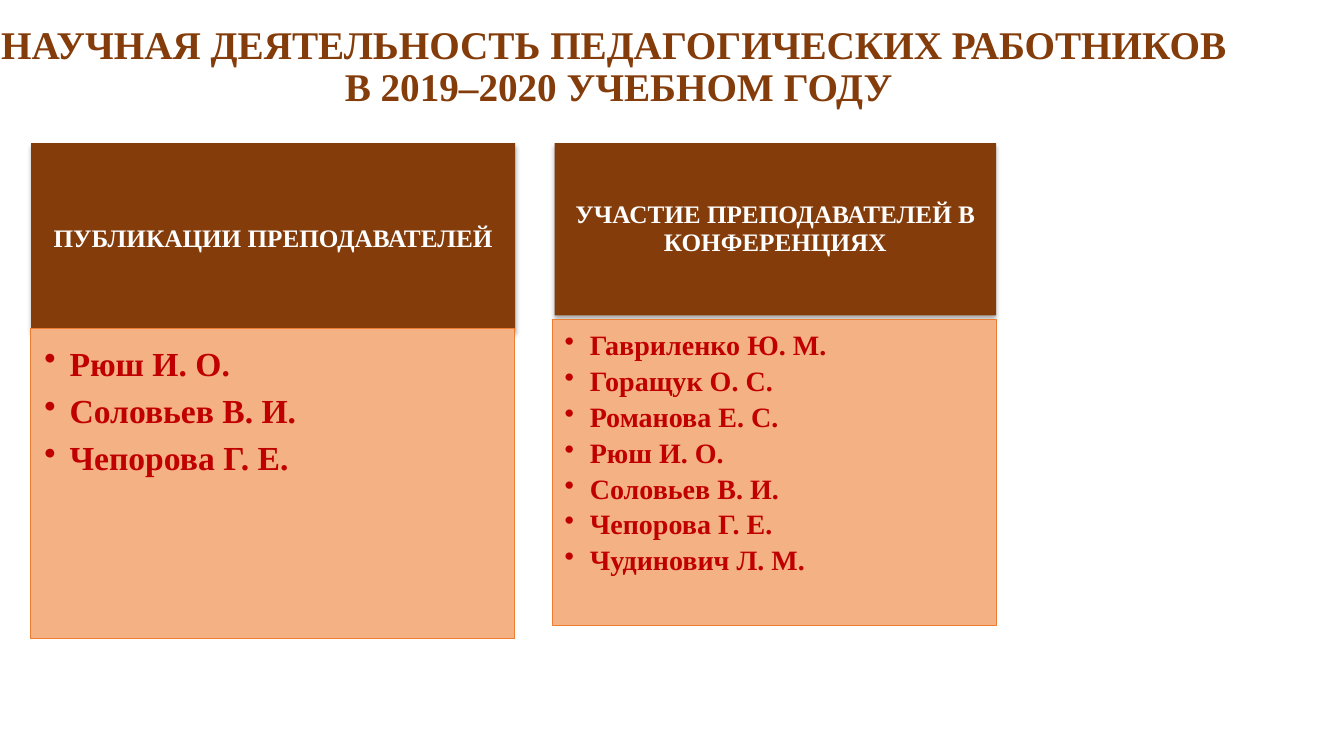
"""Build the slide on the research work of the teaching staff in 2019–2020."""
from lxml import etree
from pptx import Presentation
from pptx.dml.color import RGBColor
from pptx.enum.shapes import MSO_SHAPE
from pptx.enum.text import MSO_ANCHOR, MSO_AUTO_SIZE, PP_ALIGN
from pptx.oxml.ns import qn
from pptx.util import Pt

PX = 9144
RECTANGLE = MSO_SHAPE.RECTANGLE
TOP, MIDDLE = MSO_ANCHOR.TOP, MSO_ANCHOR.MIDDLE
LEFT, CENTER = PP_ALIGN.LEFT, PP_ALIGN.CENTER
NO_AUTOFIT = MSO_AUTO_SIZE.NONE
BROWN = RGBColor(0x84, 0x3C, 0x0B)
PEACH = RGBColor(0xF4, 0xB1, 0x83)
ORANGE = RGBColor(0xED, 0x7D, 0x31)
RED = RGBColor(0xC0, 0x00, 0x00)
WHITE = RGBColor(0xFF, 0xFF, 0xFF)


def write(shape, lines, size, color, insets=(10, 5, 10, 5), anchor=MIDDLE,
          align=CENTER, spacing=0.9, after=0, bulleted=False):
    frame = shape.text_frame
    frame.word_wrap = True
    frame.auto_size = NO_AUTOFIT
    frame.vertical_anchor = anchor
    (frame.margin_left, frame.margin_top,
     frame.margin_right, frame.margin_bottom) = [inset * PX for inset in insets]
    for index, line in enumerate(lines):
        paragraph = frame.add_paragraph() if index else frame.paragraphs[0]
        paragraph.text = line
        paragraph.alignment = align
        paragraph.line_spacing = spacing
        paragraph.space_before = Pt(0)
        paragraph.space_after = Pt(after)
        if bulleted:
            paragraph.level = 1
            properties = paragraph._p.get_or_add_pPr()
            properties.set("marL", str(25 * PX))
            properties.set("indent", str(-25 * PX))
            etree.SubElement(properties, qn("a:buChar"), char="•")
        for run in paragraph.runs:
            run.font.name = "Times New Roman"
            run.font.size = Pt(size)
            run.font.bold = True
            run.font.color.rgb = color


def add_panel(slide, box, fill):
    panel = slide.shapes.add_shape(RECTANGLE, *[side * PX for side in box])
    panel.shadow.inherit = False
    panel.fill.solid()
    panel.fill.fore_color.rgb = fill
    panel.line.fill.background()
    return panel


presentation = Presentation()
presentation.slide_width = 1333 * PX
presentation.slide_height = 750 * PX
slide = presentation.slides.add_slide(presentation.slide_layouts[5])

title = slide.shapes.title
title.left, title.top, title.width, title.height = [
    side * PX for side in (-49, 5, 1325, 125)]
write(title, ["НАУЧНАЯ ДЕЯТЕЛЬНОСТЬ ПЕДАГОГИЧЕСКИХ РАБОТНИКОВ \v"
              "В 2019–2020 УЧЕБНОМ ГОДУ"], 28, BROWN)

COLUMNS = [
    {"heading": "ПУБЛИКАЦИИ ПРЕПОДАВАТЕЛЕЙ",
     "heading_box": (31, 142, 480, 187),
     "teachers": ["Рюш И. О.", "Соловьев В. И.", "Чепорова Г. Е."],
     "list_box": (30, 326, 480, 307),
     "insets": (14, 14, 19, 21), "size": 24, "spacing": 1.0, "after": 5},
    {"heading": "УЧАСТИЕ ПРЕПОДАВАТЕЛЕЙ В КОНФЕРЕНЦИЯХ",
     "heading_box": (550, 142, 438, 171),
     "teachers": ["Гавриленко Ю. М.", "Горащук О. С.", "Романова Е. С.",
                  "Рюш И. О.", "Соловьев В. И.", "Чепорова Г. Е.",
                  "Чудинович Л. М."],
     "list_box": (548, 317, 440, 303),
     "insets": (12, 12, 16, 17), "size": 20, "spacing": 0.9, "after": 4},
]

for column in COLUMNS:
    heading = add_panel(slide, column["heading_box"], BROWN)
    effects = heading._element.spPr.find(qn("a:effectLst"))
    shadow = etree.SubElement(effects, qn("a:outerShdw"), blurRad="44450",
                              dist="27940", dir="5400000", algn="ctr",
                              rotWithShape="0")
    shade = etree.SubElement(shadow, qn("a:srgbClr"), val="000000")
    etree.SubElement(shade, qn("a:alpha"), val="32000")
    write(heading, [column["heading"]], 18, WHITE, insets=(14, 8, 14, 8),
          spacing=column["spacing"])

    teachers = add_panel(slide, column["list_box"], PEACH)
    teachers.line.color.rgb = ORANGE
    teachers.line.width = Pt(0.5)
    write(teachers, column["teachers"], column["size"], RED,
          insets=column["insets"], anchor=TOP, align=LEFT,
          spacing=column["spacing"], after=column["after"], bulleted=True)

presentation.save("out.pptx")
